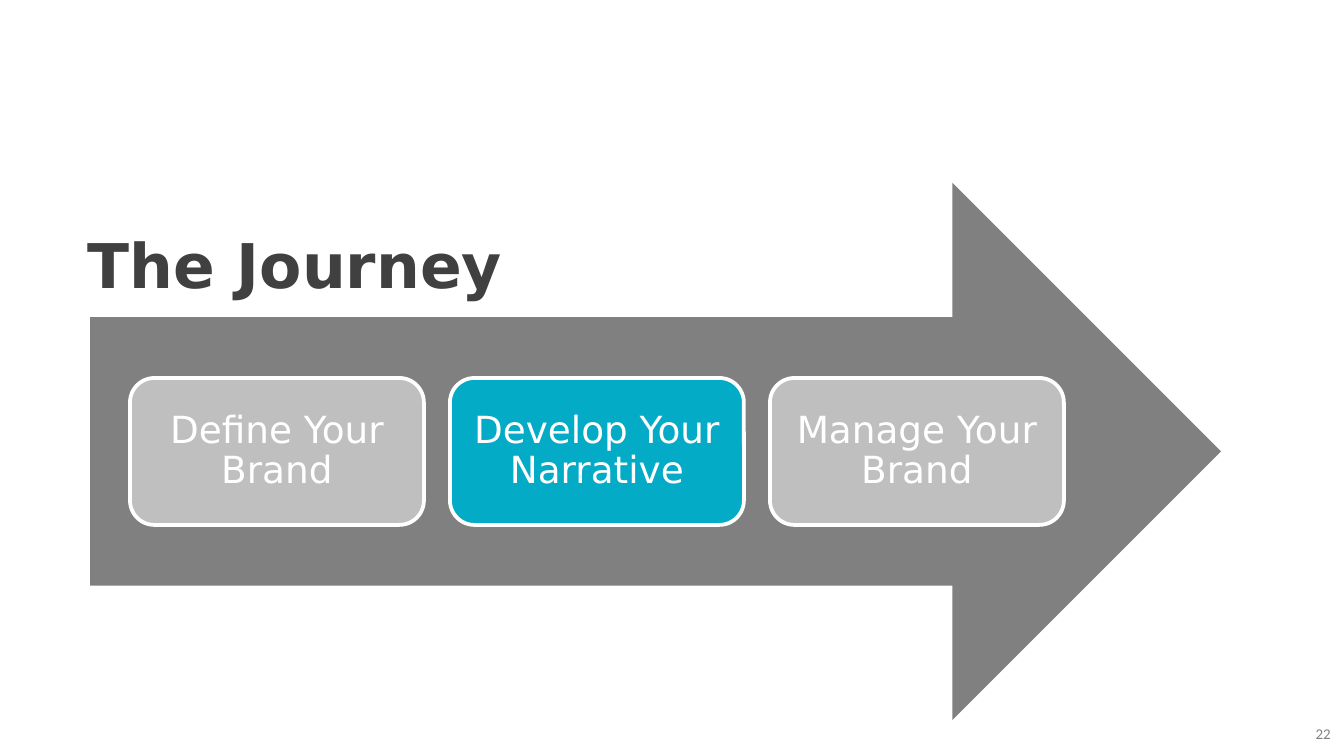
"""Builds the slide "The Journey": three steps along a broad arrow."""
from pptx import Presentation
from pptx.dml.color import RGBColor
from pptx.enum.shapes import MSO_SHAPE as Shape
from pptx.enum.text import MSO_ANCHOR as Anchor, MSO_AUTO_SIZE as AutoSize, PP_ALIGN as Align
from pptx.util import Pt

TITLE = "The Journey"
STEPS = [
    ("Define Your Brand", "BFBFBF"),
    ("Develop Your Narrative", "03ABC6"),
    ("Manage Your Brand", "BFBFBF"),
]
PAGE_NUMBER = "22"

PAGE_SIZE = (1344, 756)
ARROW_AREA = (90, 183, 1131, 537)
TITLE_AREA = (78, 222, 907, 90)
NUMBER_AREA = (1277, 714, 67, 40)
STEP_LEFT, STEP_WIDTH, STEP_HEIGHT, STEP_PITCH = 130, 294, 147, 320
EMU_PER_INCH, PX_PER_INCH = 914400, 134.4


def px(*lengths):
    return [round(length * EMU_PER_INCH / PX_PER_INCH) for length in lengths]


def color(value):
    return RGBColor.from_string(value)


def add_block(page, preset, area, fill, line=None):
    block = page.shapes.add_shape(preset, *px(*area))
    block.shadow.inherit = False
    block.fill.solid()
    block.fill.fore_color.rgb = color(fill)
    if line:
        block.line.color.rgb = color(line)
        block.line.width = Pt(2)
    else:
        block.line.fill.background()
    return block


def write(box, text, font, size, ink, align, anchor, insets, bold=False):
    frame = box.text_frame
    frame.text = text
    frame.word_wrap = True
    frame.auto_size = AutoSize.NONE
    frame.vertical_anchor = anchor
    side, edge = px(*insets)
    frame.margin_left = frame.margin_right = side
    frame.margin_top = frame.margin_bottom = edge
    para = frame.paragraphs[0]
    para.alignment = align
    span = para.runs[0]
    span.font.name = font
    span.font.size = Pt(size)
    span.font.bold = bold
    span.font.color.rgb = color(ink)
    return para


def main():
    deck = Presentation()
    deck.slide_width, deck.slide_height = px(*PAGE_SIZE)
    page = deck.slides.add_slide(deck.slide_layouts[5])

    add_block(page, Shape.RIGHT_ARROW, ARROW_AREA, "808080")
    step_top = ARROW_AREA[1] + (ARROW_AREA[3] - STEP_HEIGHT) // 2
    for index, (label, fill) in enumerate(STEPS):
        area = (STEP_LEFT + index * STEP_PITCH, step_top, STEP_WIDTH, STEP_HEIGHT)
        step = add_block(page, Shape.ROUNDED_RECTANGLE, area, fill, "FFFFFF")
        para = write(step, label, "DejaVu Sans", 20, "FFFFFF",
                     Align.CENTER, Anchor.MIDDLE, (11, 11))
        para.line_spacing = 0.9

    title = page.shapes.title
    title.left, title.top, title.width, title.height = px(*TITLE_AREA)
    write(title, TITLE, "DejaVu Sans", 33, "404040",
          Align.LEFT, Anchor.TOP, (10, 5), bold=True)

    number = page.shapes.add_textbox(*px(*NUMBER_AREA))
    write(number, PAGE_NUMBER, "Calibri", 8, "808080",
          Align.RIGHT, Anchor.MIDDLE, (13, 7))

    deck.save("out.pptx")


if __name__ == "__main__":
    main()
